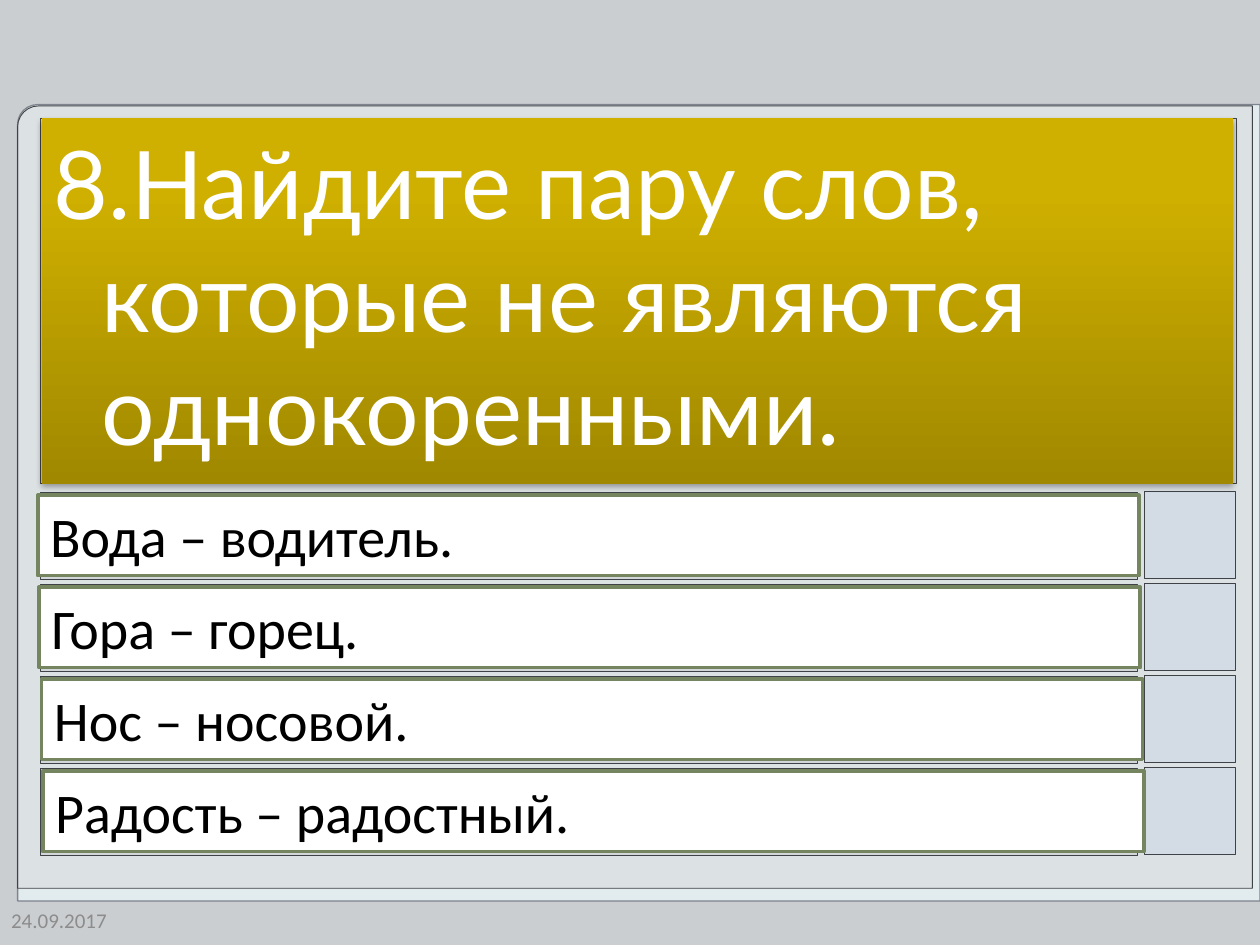
"""Builds a quiz slide with one question and four answer choices."""
from dataclasses import dataclass
from typing import Optional

from lxml.etree import SubElement
from pptx import Presentation
from pptx.dml.color import RGBColor
from pptx.enum.shapes import MSO_SHAPE as Shp
from pptx.enum.text import MSO_ANCHOR as Anchor, PP_ALIGN as Align
from pptx.oxml.ns import qn
from pptx.util import Emu, Pt

PX = 9144
INDENT = 38
BACK = RGBColor(0xCB, 0xCE, 0xD1)
BACK_SHEET = RGBColor(0xE2, 0xEC, 0xEF)
BACK_EDGE = RGBColor(0x7E, 0x84, 0x8D)
FRONT_SHEET = RGBColor(0xD8, 0xD8, 0xD8)
EDGE = RGBColor(0x3F, 0x42, 0x47)
TILE = RGBColor(0xCC, 0xD8, 0xE7)
OLIVE = RGBColor(0x74, 0x85, 0x60)
GRAY = RGBColor(0x8C, 0x8C, 0x8C)
WHITE = RGBColor(0xFF, 0xFF, 0xFF)
BLACK = RGBColor(0, 0, 0)
GOLD_STOPS = (
    (0, RGBColor(0xA0, 0x88, 0x00)),
    (80, RGBColor(0xCF, 0xB0, 0x00)),
    (100, RGBColor(0xD0, 0xB1, 0x00)),
)


@dataclass(frozen=True)
class Box:
    x: int
    y: int
    w: int
    h: int
    fill: Optional[RGBColor] = None
    alpha: int = 100
    line: Optional[RGBColor] = EDGE
    weight: float = 0.5
    shape: Shp = Shp.RECTANGLE
    adj: tuple = ()
    flip: bool = False
    rotation: int = 0

    @property
    def place(self) -> tuple:
        return tuple(Emu(v * PX) for v in (self.x, self.y, self.w, self.h))


@dataclass(frozen=True)
class Label:
    text: str
    size: int
    color: RGBColor
    font: str = "Calibri"
    indent: int = 0
    anchor: Anchor = Anchor.TOP


PANELS = (
    Box(191, -94, 632, 986, BACK_SHEET, line=BACK_EDGE, weight=0.75,
        shape=Shp.SNIP_ROUND_RECTANGLE, adj=(0.025, 0), flip=True, rotation=270),
    Box(14, 84, 980, 621, FRONT_SHEET, 50,
        shape=Shp.ROUND_1_RECTANGLE, adj=(0.027,), flip=True),
    Box(32, 94, 949, 290, BACK, 50),
)
QUESTION = Box(33, 94, 946, 290, line=None)
DATE = Box(-1, 710, 117, 40)
ANSWERS = (
    ("Вода – водитель.", 30),
    ("Гора – горец.", 31),
    ("Нос – носовой.", 33),
    ("Радость – радостный.", 34),
)
ROW_TOP, ROW_STEP = 391, 73


def draw_box(shapes, box: Box):
    sp = shapes.add_shape(box.shape, *box.place)
    sp.shadow.inherit = False
    sp.rotation = box.rotation
    for i, value in enumerate(box.adj):
        sp.adjustments[i] = value
    if box.flip:
        sp._element.spPr.find(qn("a:xfrm")).set("flipH", "1")
    if box.fill is not None:
        sp.fill.solid()
        sp.fill.fore_color.rgb = box.fill
        if box.alpha < 100:
            clr = sp._element.spPr.find(qn("a:solidFill"))[0]
            SubElement(clr, qn("a:alpha"), val=str(box.alpha * 1000))
    if box.line is None:
        sp.line.fill.background()
    else:
        sp.line.color.rgb = box.line
        sp.line.width = Pt(box.weight)
    return sp


def write(sp, label: Label) -> None:
    tf = sp.text_frame
    tf.word_wrap = True
    tf.vertical_anchor = label.anchor
    p = tf.paragraphs[0]
    p.alignment = Align.LEFT
    if label.indent:
        pPr = p._p.get_or_add_pPr()
        pPr.set("marL", str(label.indent * PX))
        pPr.set("indent", str(-label.indent * PX))
    r = p.add_run()
    r.text = label.text
    for name, value in {"name": label.font, "size": Pt(label.size)}.items():
        setattr(r.font, name, value)
    r.font.color.rgb = label.color


def gild(sp) -> None:
    sp.fill.gradient()
    sp.fill.gradient_angle = 90
    spPr = sp._element.spPr
    stops = spPr.find(qn("a:gradFill")).find(qn("a:gsLst"))
    for gs in list(stops):
        stops.remove(gs)
    for pos, color in GOLD_STOPS:
        gs = SubElement(stops, qn("a:gs"), pos=str(pos * 1000))
        SubElement(gs, qn("a:srgbClr"), val=str(color))
    shadow = SubElement(spPr.find(qn("a:effectLst")), qn("a:outerShdw"),
                        blurRad=str(int(Pt(3.1))), dist=str(int(Pt(1.8))),
                        dir="5400000", rotWithShape="0")
    clr = SubElement(shadow, qn("a:srgbClr"), val=str(BLACK))
    SubElement(clr, qn("a:alpha"), val="35000")


def main() -> None:
    prs = Presentation()
    prs.slide_width, prs.slide_height = Emu(1000 * PX), Emu(750 * PX)
    s = prs.slides.add_slide(prs.slide_layouts[6])
    s.background.fill.solid()
    s.background.fill.fore_color.rgb = BACK
    shapes = s.shapes

    for panel in PANELS:
        draw_box(shapes, panel)
    rows = [ROW_TOP + i * ROW_STEP for i in range(len(ANSWERS))]
    for y in rows:
        draw_box(shapes, Box(32, y, 871, 69, BACK, 50))
        draw_box(shapes, Box(908, y - 1, 73, 69, TILE, 50))

    write(shapes.add_textbox(*DATE.place),
          Label("24.09.2017", 12, GRAY, anchor=Anchor.MIDDLE))
    sp = draw_box(shapes, QUESTION)
    gild(sp)
    write(sp, Label("8.Найдите пару слов, которые не являются однокоренными.",
                    54, WHITE, "Lato", INDENT))
    for (text, x), y in zip(ANSWERS, rows):
        sp = draw_box(shapes, Box(x, y + 2, 874, 64, WHITE, line=OLIVE, weight=2))
        write(sp, Label(text, 32, BLACK, indent=INDENT))
    prs.save("out.pptx")


if __name__ == "__main__":
    main()
